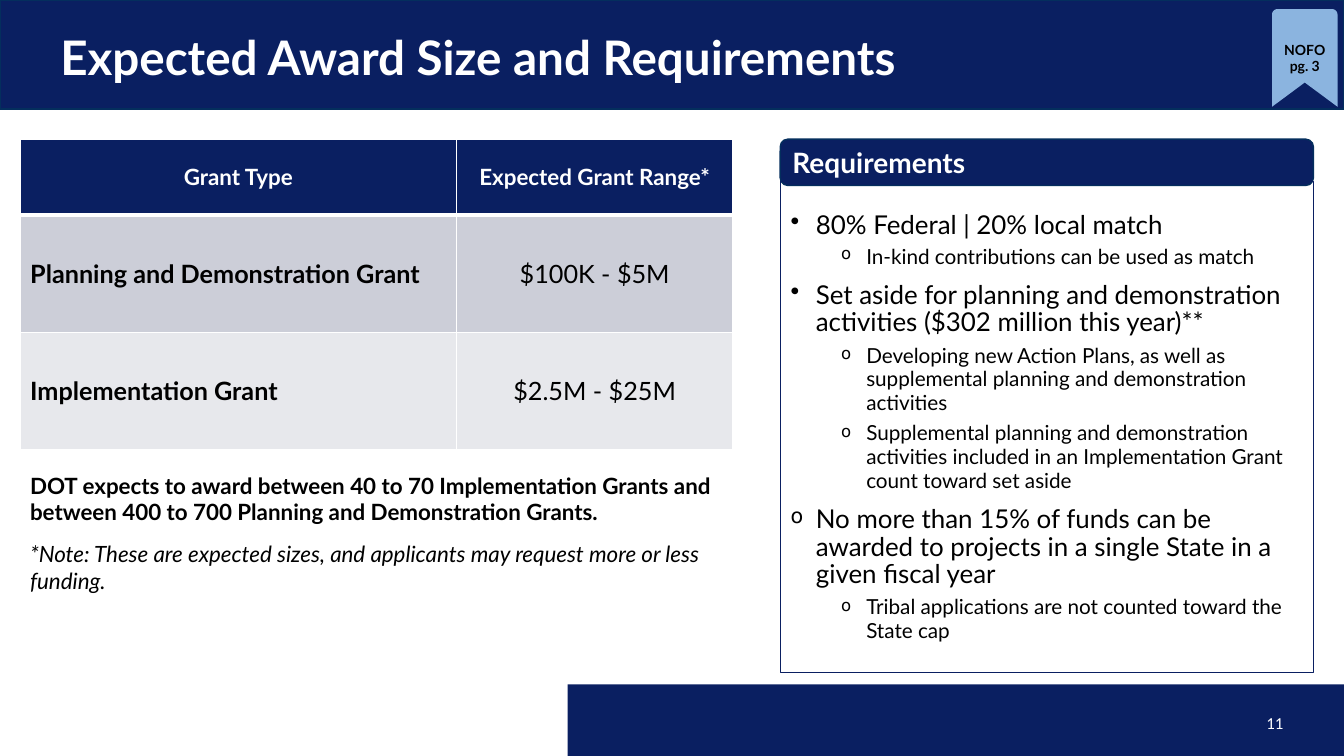
import math
import lxml.etree
import pptx
import pptx.dml.color
import pptx.enum.shapes
import pptx.enum.text
import pptx.oxml.ns
import pptx.util

Pt = pptx.util.Pt
ALIGN = pptx.enum.text.PP_ALIGN
ANCHOR = pptx.enum.text.MSO_ANCHOR
AUTO_SIZE = pptx.enum.text.MSO_AUTO_SIZE
SHAPE = pptx.enum.shapes.MSO_SHAPE

NAVY, EDGE, WHITE, BLACK, SKY = "0A1F61", "042E5D", "FFFFFF", "000000", "8BB4DF"
TOP_LEVEL = {"indent": 18, "size": 18.5, "spacing": 0.88, "before": 10}
SUB_LEVEL = {"indent": 54, "size": 14.8, "spacing": 0.95, "before": 5}
REQUIREMENTS = [
    ("•", TOP_LEVEL, "80% Federal | 20% local match"),
    ("o", SUB_LEVEL | {"spacing": 0.88}, "In-kind contributions can be used as match"),
    ("•", TOP_LEVEL, "Set aside for planning and demonstration activities ($302 million this year)**"),
    ("o", SUB_LEVEL, "Developing new Action Plans, as well as supplemental planning "
                     "and demonstration activities"),
    ("o", SUB_LEVEL, "Supplemental planning and demonstration activities included in "
                     "an Implementation Grant count toward set aside"),
    ("o", TOP_LEVEL, "No more than 15% of funds can be awarded to projects in a single "
                     "State in a given fiscal year"),
    ("o", SUB_LEVEL, "Tribal applications are not counted toward the State cap"),
]
GRANTS = [
    ("Grant Type", "Expected Grant Range*"),
    ("Planning and Demonstration Grant", "$100K - $5M"),
    ("Implementation Grant", "$2.5M - $25M"),
]


def colour(value):
    return pptx.dml.color.RGBColor.from_string(value)


def apply_format(target, values):
    for name, value in values.items():
        setattr(target, name, value)


def add_child(parent, tag, **attributes):
    child = lxml.etree.SubElement(parent, pptx.oxml.ns.qn(tag))
    for name, value in attributes.items():
        child.set(name, str(value))
    return child


def write(para, text, size, tint, **font_format):
    span = para.add_run()
    span.text = text
    apply_format(span.font, {"name": "Lato", "size": Pt(size)} | font_format)
    span.font.color.rgb = colour(tint)


def paint(shape, fill=None, line=None, width=1):
    shape.shadow.inherit = False
    if fill:
        shape.fill.solid()
        shape.fill.fore_color.rgb = colour(fill)
    else:
        shape.fill.background()
    if line:
        shape.line.color.rgb = colour(line)
        shape.line.width = Pt(width)
    else:
        shape.line.fill.background()


def add_box(page, kind, place, **look):
    box = page.shapes.add_shape(kind, *map(Pt, place))
    paint(box, **look)
    return box


def label(box, text, size, tint, align=ALIGN.LEFT, anchor=ANCHOR.MIDDLE, **font_format):
    apply_format(box.text_frame, {"word_wrap": True, "vertical_anchor": anchor})
    para = box.text_frame.paragraphs[0]
    para.alignment = align
    write(para, text, size, tint, **font_format)
    return para


def add_text(page, place, text, size, tint, **options):
    box = page.shapes.add_textbox(*map(Pt, place))
    return box, label(box, text, size, tint, **options)


def add_note(page, top, text, **font_format):
    box, para = add_text(page, (14.4, top, 509, 46), text, 16, BLACK,
                         anchor=ANCHOR.TOP, **font_format)
    box.text_frame.auto_size = AUTO_SIZE.SHAPE_TO_FIT_TEXT


def border_cell(cell, widths):
    properties = cell._tc.get_or_add_tcPr()
    for position, (side, width) in enumerate(widths.items()):
        edge = add_child(properties, "a:ln" + side, w=Pt(width))
        add_child(add_child(edge, "a:solidFill"), "a:srgbClr", val=WHITE)
        properties.insert(position, edge)


def add_grant_table(page):
    table = page.shapes.add_table(3, 2, Pt(14.4), Pt(99.4), Pt(509), Pt(222)).table
    for column, width in zip(table.columns, (311.8, 197.2)):
        column.width = Pt(width)
    fills = (NAVY, "CCCED8", "E7E8EC")
    for row_index, (row, height) in enumerate(zip(table.rows, (54, 84, 84))):
        row.height = Pt(height)
        header = row_index == 0
        for column_index, cell in enumerate(row.cells):
            cell.fill.solid()
            cell.fill.fore_color.rgb = colour(fills[row_index])
            cell.vertical_anchor = ANCHOR.MIDDLE
            border_cell(cell, {"L": 1, "R": 1, "T": 3 if row_index == 1 else 1,
                               "B": 3 if header else 1})
            para = cell.text_frame.paragraphs[0]
            para.alignment = ALIGN.CENTER if header or column_index else ALIGN.LEFT
            write(para, GRANTS[row_index][column_index], 16 if header else 18,
                  WHITE if header else BLACK, bold=header or column_index == 0)


def add_bullet(para, mark, level, text, first):
    properties = para._p.get_or_add_pPr()
    properties.set("marL", str(Pt(level["indent"])))
    properties.set("indent", str(Pt(-18)))
    if mark == "o":
        add_child(properties, "a:buSzPct", val=80000)
    add_child(properties, "a:buChar", char=mark)
    apply_format(para, {
        "alignment": ALIGN.LEFT,
        "level": int(level["indent"] > 18),
        "line_spacing": level["spacing"],
        "space_before": Pt(0 if first else level["before"]),
    })
    write(para, text, level["size"], BLACK)


def add_requirements(page):
    header = add_box(page, SHAPE.ROUNDED_RECTANGLE, (557.3, 99.4, 380.9, 33.1),
                     fill=NAVY, line=EDGE)
    label(header, "Requirements", 20, WHITE, bold=True)
    panel = add_box(page, SHAPE.RECTANGLE, (557.7, 129.6, 380.9, 350.6),
                    line=NAVY, width=0.75)
    frame = panel.text_frame
    apply_format(frame, {"word_wrap": True, "vertical_anchor": ANCHOR.TOP,
                         "margin_top": Pt(22)})
    for index, (mark, level, text) in enumerate(REQUIREMENTS):
        para = frame.add_paragraph() if index else frame.paragraphs[0]
        add_bullet(para, mark, level, text, index == 0)


def add_ribbon(page):
    left, top, right, bottom, radius = 908.6, 6.5, 955.4, 76.3, 4
    points = [(left, bottom), ((left + right) / 2, 59), (right, bottom)]
    for centre, start in ((right - radius, 0), (left + radius, 90)):
        for step in range(7):
            angle = math.radians(start + 15 * step)
            points.append((centre + radius * math.cos(angle),
                           top + radius - radius * math.sin(angle)))
    corners = [(Pt(x), Pt(y)) for x, y in points]
    builder = page.shapes.build_freeform(*corners[0])
    builder.add_line_segments(corners[1:], close=True)
    ribbon = builder.convert_to_shape()
    paint(ribbon, fill=SKY)
    label(ribbon, "NOFO pg. 3", 10, BLACK, align=ALIGN.CENTER, bold=True)


def main():
    deck = pptx.Presentation()
    apply_format(deck, {"slide_width": Pt(960), "slide_height": Pt(540)})
    page = deck.slides.add_slide(deck.slide_layouts[6])
    add_box(page, SHAPE.RECTANGLE, (0, 0, 960, 78), fill=NAVY, line=EDGE)
    add_box(page, SHAPE.RECTANGLE, (405.5, 488.8, 554.5, 51.2), fill=NAVY)
    add_text(page, (707.8, 507, 216, 18), "11", 12, WHITE, align=ALIGN.RIGHT, name="Calibri")
    title, para = add_text(page, (36, 0, 888, 78), "Expected Award Size and Requirements",
                           34, WHITE, bold=True)
    para.line_spacing = 1.08
    add_grant_table(page)
    add_note(page, 333.4, "DOT expects to award between 40 to 70 Implementation Grants and "
                          "between 400 to 700 Planning and Demonstration Grants.", bold=True)
    add_note(page, 382.3, "*Note: These are expected sizes, and applicants may request "
                          "more or less funding.", italic=True)
    add_requirements(page)
    add_ribbon(page)
    deck.save("out.pptx")


if __name__ == "__main__":
    main()
